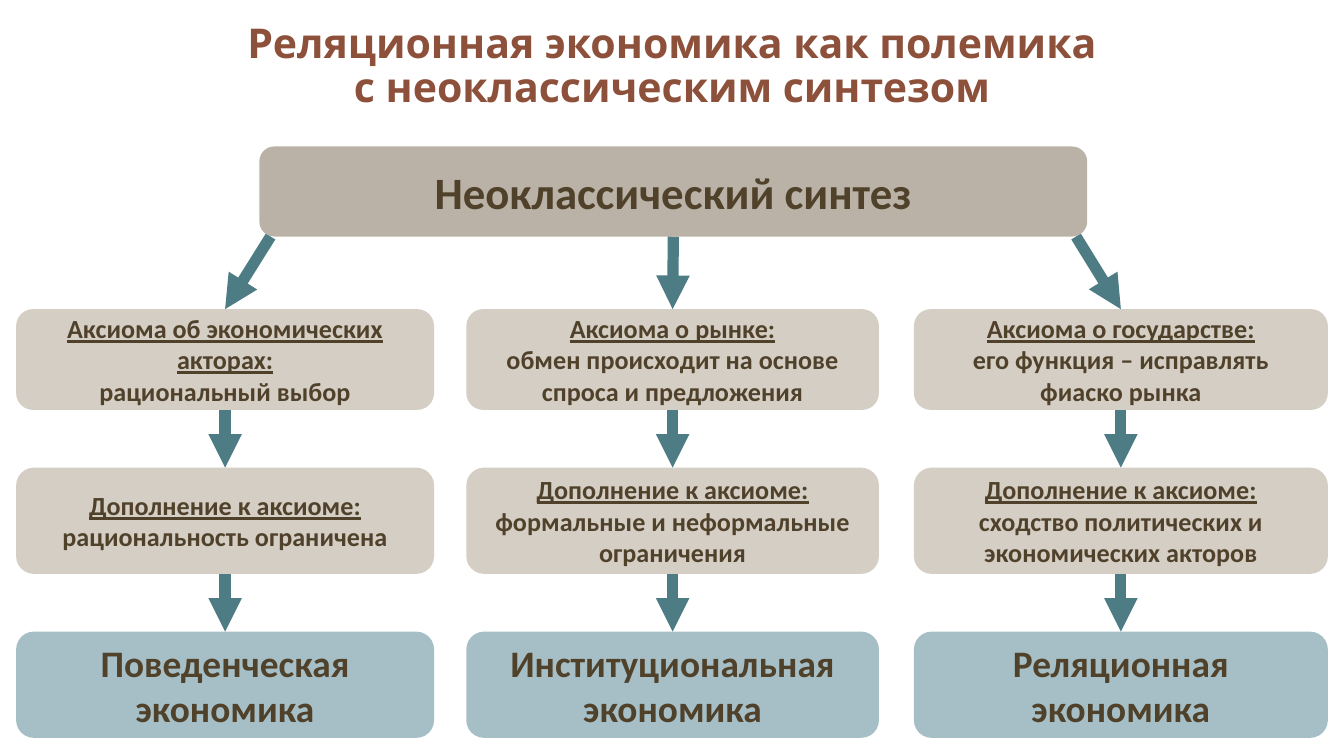
import lxml.etree
import pptx
import pptx.dml.color
import pptx.enum.shapes
import pptx.enum.text
import pptx.oxml.ns
import pptx.util

Pt = pptx.util.Pt
RGBColor = pptx.dml.color.RGBColor
qn = pptx.oxml.ns.qn

TITLE_BROWN = RGBColor(0x8D, 0x50, 0x3B)
TEXT_BROWN = RGBColor(0x50, 0x41, 0x2B)
DARK_SAND = RGBColor(0xB3, 0xAA, 0x9D)
LIGHT_SAND = RGBColor(0xD1, 0xC9, 0xBE)
BLUE = RGBColor(0x6B, 0x95, 0xA1)
TEAL = RGBColor(0x4D, 0x7C, 0x85)

# Boxes are (left, top, width, height) in points.
TITLE_BOX = (8.64, 0, 702.72, 72)
SYNTHESIS_BOX = (138.96, 78.48, 443.52, 48.24)
ROWS = [(165.6, 54), (250.56, 56.88), (338.4, 56.88)]
CORNER_INSET = 6

ADDITION = "Дополнение к аксиоме:"
COLUMNS = [
    {
        "span": (8.64, 223.92),
        "axiom": ("Аксиома об экономических акторах:", "рациональный выбор"),
        "addition": (ADDITION, "рациональность ограничена"),
        "result": "Поведенческая экономика",
    },
    {
        "span": (249.84, 221.04),
        "axiom": ("Аксиома о рынке:", "обмен происходит на основе спроса и предложения"),
        "addition": (ADDITION, "формальные и неформальные ограничения"),
        "result": "Институциональная экономика",
    },
    {
        "span": (489.6, 221.76),
        "axiom": ("Аксиома о государстве:", "его функция – исправлять фиаско рынка"),
        "addition": (ADDITION, "сходство политических и экономических акторов"),
        "result": "Реляционная экономика",
    },
]


def write_paragraphs(text_frame, texts, size, color=TEXT_BROWN, name="Calibri", heading=False):
    """Write centred bold paragraphs; with heading, underline the first."""
    text_frame.word_wrap = True
    text_frame.vertical_anchor = pptx.enum.text.MSO_ANCHOR.MIDDLE
    for index, text in enumerate(texts):
        paragraph = text_frame.paragraphs[0] if index == 0 else text_frame.add_paragraph()
        paragraph.alignment = pptx.enum.text.PP_ALIGN.CENTER
        paragraph.text = text
        font_format = {
            "name": name,
            "size": Pt(size),
            "bold": True,
            "underline": heading and index == 0,
        }
        for font in [paragraph.font] + [run.font for run in paragraph.runs]:
            for attribute, value in font_format.items():
                setattr(font, attribute, value)
            font.color.rgb = color


def add_title(slide, box):
    text_box = slide.shapes.add_textbox(*map(Pt, box))
    title = "Реляционная экономика как полемика\vс неоклассическим синтезом"
    write_paragraphs(text_box.text_frame, [title], 22, TITLE_BROWN, "Open Sans")
    text_box.text_frame.paragraphs[0].line_spacing = 0.9


def add_rounded_box(slide, box, texts, size, fill, opacity, heading=False):
    shape = slide.shapes.add_shape(
        pptx.enum.shapes.MSO_SHAPE.ROUNDED_RECTANGLE, *map(Pt, box)
    )
    shape.shadow.inherit = False
    shape.line.fill.background()
    shape.fill.solid()
    shape.fill.fore_color.rgb = fill
    color = shape.fill._xPr.find(qn("a:solidFill")).find(qn("a:srgbClr"))
    lxml.etree.SubElement(color, qn("a:alpha"), val=str(opacity * 1000))
    write_paragraphs(shape.text_frame, texts, size, heading=heading)


def add_arrow(slide, start, end):
    connector = slide.shapes.add_connector(
        pptx.enum.shapes.MSO_CONNECTOR.STRAIGHT, *map(Pt, start + end)
    )
    connector.line.color.rgb = TEAL
    connector.line.width = Pt(6)
    lxml.etree.SubElement(connector.line._get_or_add_ln(), qn("a:tailEnd"), type="triangle")
    lxml.etree.SubElement(connector._element.spPr, qn("a:effectLst"))


def add_column(slide, column, rows, source):
    """Stack axiom, addition and result, with arrows leading down from source."""
    left, width = column["span"]
    center = left + width / 2
    boxes = [(left, top, width, height) for top, height in rows]
    for box, part in zip(boxes, ("axiom", "addition")):
        add_rounded_box(slide, box, column[part], 14, LIGHT_SAND, 90, heading=True)
    add_rounded_box(slide, boxes[2], [column["result"]], 20, BLUE, 60)
    for top, height in rows:
        add_arrow(slide, source, (center, top))
        source = (center, top + height)


def main():
    presentation = pptx.Presentation()
    presentation.slide_width = Pt(720)
    presentation.slide_height = Pt(405)
    slide = presentation.slides.add_slide(presentation.slide_layouts[6])

    add_title(slide, TITLE_BOX)
    left, top, width, height = SYNTHESIS_BOX
    source_xs = (left + CORNER_INSET, left + width / 2, left + width - CORNER_INSET)
    for column, source_x in zip(COLUMNS, source_xs):
        add_column(slide, column, ROWS, (source_x, top + height))
    add_rounded_box(slide, SYNTHESIS_BOX, ["Неоклассический синтез"], 24, DARK_SAND, 90)

    presentation.save("out.pptx")


if __name__ == "__main__":
    main()
